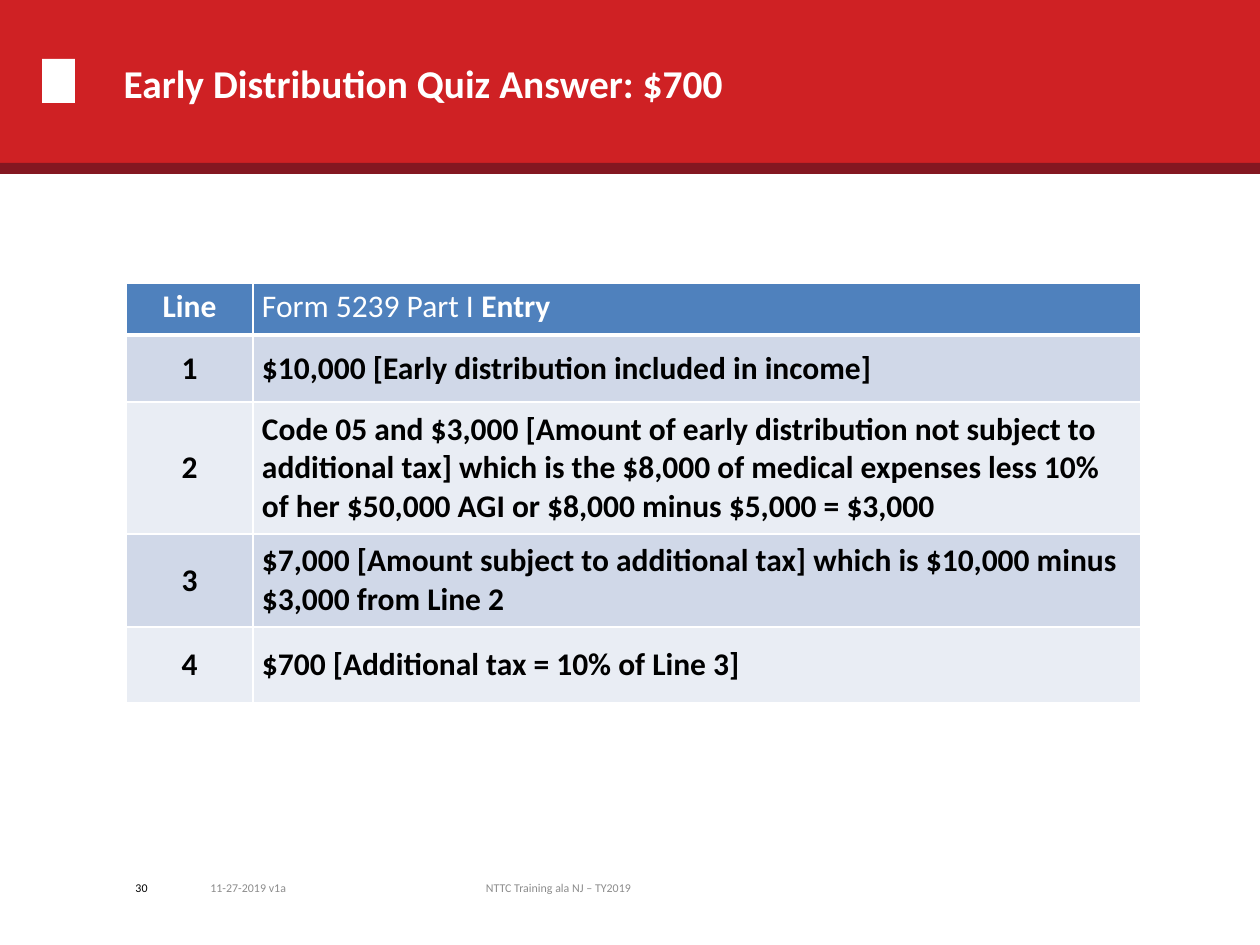
from lxml import etree
from pptx import Presentation
from pptx.dml.color import RGBColor
from pptx.enum.shapes import MSO_SHAPE
from pptx.enum.text import MSO_ANCHOR, MSO_AUTO_SIZE, PP_ALIGN
from pptx.oxml.ns import qn
from pptx.util import Pt

EMU_PER_PX = 914400 / 126
LEFT, CENTER, RIGHT = PP_ALIGN.LEFT, PP_ALIGN.CENTER, PP_ALIGN.RIGHT
TOP, MIDDLE = MSO_ANCHOR.TOP, MSO_ANCHOR.MIDDLE
RECTANGLE = MSO_SHAPE.RECTANGLE
NO_AUTO_SIZE = MSO_AUTO_SIZE.NONE
TITLE_ONLY = 5

FONT = "Calibri"
WHITE, BLACK, GRAY = "FFFFFF", "000000", "8C8C8C"
RED, DARK_RED = "CF2124", "841721"
HEADER_BLUE = "4F81BD"
BAND_FILLS = ["D0D8E8", "E9EDF4"]

COLUMN_WIDTHS = [127, 888]
ROW_HEIGHTS = [52, 67, 132, 93, 76]
HEADER = ["Line", [("Form 5239 Part I ", False), ("Entry", True)]]
ENTRIES = [
    "$10,000 [Early distribution included in income]",
    "Code 05 and $3,000 [Amount of early distribution not subject to "
    "additional tax] which is the $8,000 of medical expenses less 10% of her "
    "$50,000 AGI or $8,000 minus $5,000 = $3,000",
    "$7,000 [Amount subject to additional tax] which is $10,000 minus "
    "$3,000 from Line 2",
    "$700 [Additional tax = 10% of Line 3]",
]


def px(length):
    """Turn a length in px into EMU."""
    return round(length * EMU_PER_PX)


def color(hex_string):
    """Turn a hex string into a colour."""
    return RGBColor.from_string(hex_string)


def write_text(frame, text, size=18, hex_color=BLACK, bold=False, align=LEFT):
    """Write a string, or a list of (string, bold) runs, into a text frame."""
    runs = [(text, bold)] if isinstance(text, str) else text
    paragraph = frame.paragraphs[0]
    paragraph.alignment = align
    for content, is_bold in runs:
        run = paragraph.add_run()
        run.text = content
        run.font.name = FONT
        run.font.size = Pt(size)
        run.font.bold = is_bold
        run.font.color.rgb = color(hex_color)


def add_rectangle(slide, left, top, width, height, fill):
    """Add a plain filled rectangle."""
    shape = slide.shapes.add_shape(
        RECTANGLE, px(left), px(top), px(width), px(height))
    shape.shadow.inherit = False
    shape.fill.solid()
    shape.fill.fore_color.rgb = color(fill)
    shape.line.fill.background()


def set_title(slide, text):
    """Place and format the title placeholder."""
    title = slide.shapes.title
    title.left, title.top = px(111), px(4)
    title.width, title.height = px(1008), px(157)
    title.text_frame.vertical_anchor = MIDDLE
    title.text_frame.auto_size = NO_AUTO_SIZE
    write_text(title.text_frame, text, size=22.5, hex_color=WHITE, bold=True)


def add_footer(slide, left, width, text, **text_format):
    """Add one small text box on the footer line."""
    box = slide.shapes.add_textbox(px(left), px(863), px(width), px(50))
    box.text_frame.word_wrap = True
    box.text_frame.vertical_anchor = MIDDLE
    write_text(box.text_frame, text, size=6.8, **text_format)


def set_borders(cell, bottom_width):
    """Draw white borders round a cell, all 1 pt but the bottom one."""
    properties = cell._tc.get_or_add_tcPr()
    for side, width in zip("LRTB", [1, 1, 1, bottom_width]):
        line = etree.SubElement(
            properties, qn(f"a:ln{side}"), w=str(Pt(width)))
        fill = etree.SubElement(line, qn("a:solidFill"))
        etree.SubElement(fill, qn("a:srgbClr"), val=WHITE)


def format_cell(cell, text, fill, anchor, bottom_width, **text_format):
    """Fill, border and write one table cell."""
    set_borders(cell, bottom_width)
    cell.fill.solid()
    cell.fill.fore_color.rgb = color(fill)
    cell.vertical_anchor = anchor
    cell.margin_left = cell.margin_right = px(9)
    cell.margin_top = cell.margin_bottom = px(5)
    write_text(cell.text_frame, text, bold=True, **text_format)


def add_answer_table(slide):
    """Add the table of form lines and their entries."""
    rows = [HEADER] + [[str(number), entry]
                       for number, entry in enumerate(ENTRIES, 1)]
    table = slide.shapes.add_table(
        len(rows), len(COLUMN_WIDTHS), px(126), px(283),
        px(sum(COLUMN_WIDTHS)), px(sum(ROW_HEIGHTS))).table
    for column, width in zip(table.columns, COLUMN_WIDTHS):
        column.width = px(width)
    for index, (row, height, texts) in enumerate(
            zip(table.rows, ROW_HEIGHTS, rows)):
        row.height = px(height)
        if index == 0:
            style = dict(fill=HEADER_BLUE, anchor=TOP, bottom_width=3,
                         hex_color=WHITE)
        else:
            style = dict(fill=BAND_FILLS[(index - 1) % 2], anchor=MIDDLE,
                         bottom_width=1)
        for cell, text, align in zip(row.cells, texts, [CENTER, LEFT]):
            format_cell(cell, text, align=align, **style)


def main():
    """Build the slide and save it."""
    presentation = Presentation()
    presentation.slide_width, presentation.slide_height = px(1260), px(945)
    slide = presentation.slides.add_slide(
        presentation.slide_layouts[TITLE_ONLY])
    add_rectangle(slide, 0, -1, 1260, 168, RED)
    add_rectangle(slide, 42, 59, 33, 44, WHITE)
    add_rectangle(slide, 0, 163, 1260, 11, DARK_RED)
    title_element = slide.shapes.title._element
    title_element.getparent().append(title_element)
    set_title(slide, "Early Distribution Quiz Answer: $700")
    add_answer_table(slide)
    add_footer(slide, 63, 97, "30", align=RIGHT)
    add_footer(slide, 198, 137, "11-27-2019 v1a", hex_color=GRAY)
    add_footer(slide, 359, 399, "NTTC Training ala NJ – TY2019",
               hex_color=GRAY, align=CENTER)
    presentation.save("out.pptx")


if __name__ == "__main__":
    main()
